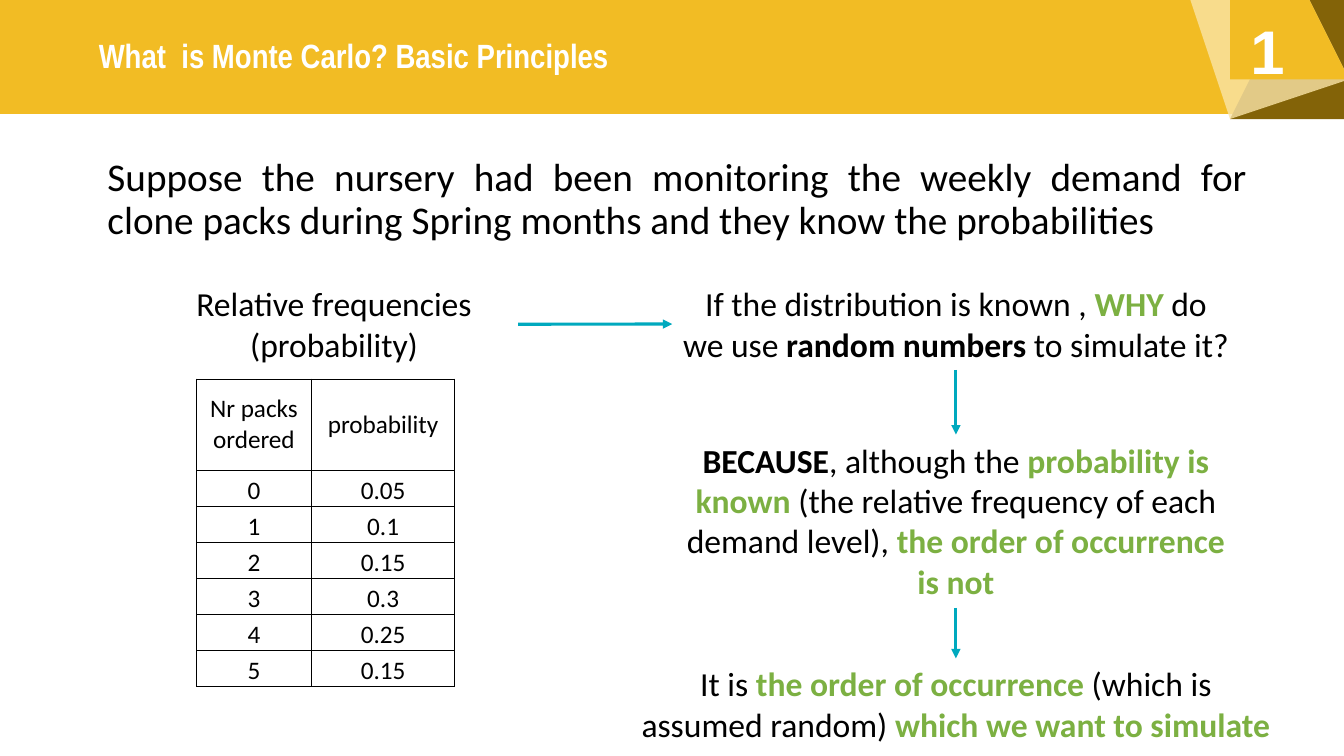
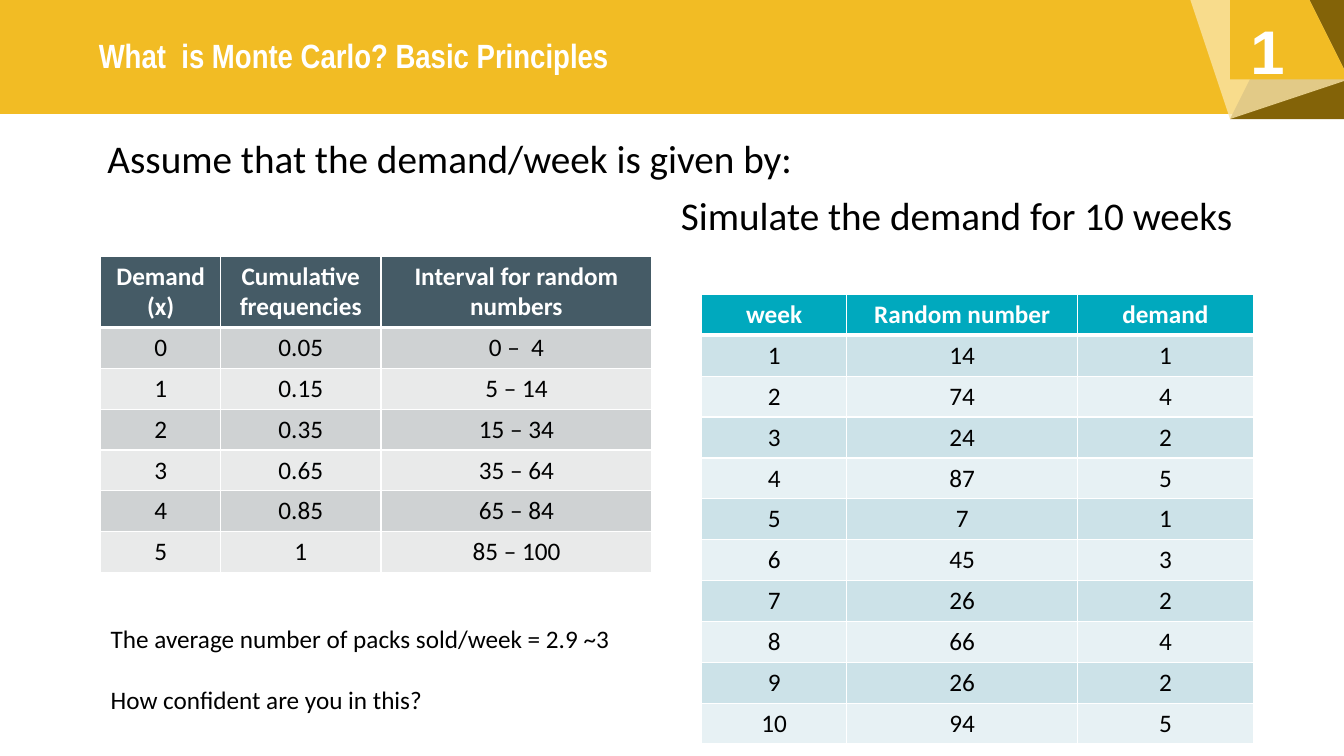
from lxml import etree
from pptx import Presentation
from pptx.dml.color import RGBColor
from pptx.enum import shapes, text
from pptx.oxml import ns
from pptx.util import Cm, Pt

GOLD = RGBColor(0xF2, 0xBC, 0x24)
BROWN = RGBColor(0x83, 0x63, 0x08)
CREAM = RGBColor(0xFA, 0xE4, 0xA7)
WHITE = RGBColor(0xFF, 0xFF, 0xFF)
BLACK = RGBColor(0, 0, 0)
GREEN = RGBColor(0x7C, 0xB0, 0x42)
TEAL = RGBColor(0x00, 0xA9, 0xBE)
SLATE = RGBColor(0x45, 0x5B, 0x66)
GREYS = RGBColor(0xCF, 0xD2, 0xD3), RGBColor(0xE9, 0xEA, 0xEA)
BLUES = RGBColor(0xCC, 0xE2, 0xE8), RGBColor(0xE7, 0xF1, 0xF4)

LEFT, MID = text.PP_ALIGN.LEFT, text.PP_ALIGN.CENTER
JUST = text.PP_ALIGN.JUSTIFY


def write(slide, box, paras, size=24, align=MID, face="Calibri", color=BLACK, bold=False):
    """Add a text box; a run is a plain string or a bold (words, colour) pair."""
    shape = slide.shapes.add_textbox(*map(Cm, box))
    frame = shape.text_frame
    frame.word_wrap = True
    for i, runs in enumerate(paras):
        para = frame.paragraphs[0] if i == 0 else frame.add_paragraph()
        para.alignment = align
        font = para.font
        font.size, font.name, font.bold = Pt(size), face, bold
        font.color.rgb = color
        for item in runs:
            run = para.add_run()
            if isinstance(item, str):
                run.text = item
            else:
                run.text, run.font.color.rgb = item
                run.font.bold = True
    return shape


def grid(slide, spot, cols, rows, high, head=None, bands=None):
    """Add a table: filled with white rules if banded, else plain with black ones."""
    wide = [Cm(c) for c in cols]
    table = slide.shapes.add_table(len(rows), len(cols), Cm(spot[0]), Cm(spot[1]),
                                   sum(wide), Cm(sum(high))).table
    table.first_row = table.horz_banding = False
    for col, width in zip(table.columns, wide):
        col.width = width
    rule, thin, thick = (WHITE, 1, 3) if bands else (BLACK, 0.5, 0.5)
    for r, row in enumerate(rows):
        table.rows[r].height = Cm(high[r])
        for c, words in enumerate(row):
            cell = table.cell(r, c)
            cell.text = words
            para = cell.text_frame.paragraphs[0]
            para.alignment = MID
            font = para.font
            font.size, font.name = Pt(18), "Calibri"
            font.bold = bool(bands) and r == 0
            font.color.rgb = WHITE if font.bold else BLACK
            props = cell._tc.get_or_add_tcPr()
            for side in "LRTB":
                heavy = (r, side) in ((0, "B"), (1, "T"))
                line = etree.SubElement(props, ns.qn("a:ln" + side),
                                        w=str(Pt(thick if heavy else thin)))
                fill = etree.SubElement(line, ns.qn("a:solidFill"))
                etree.SubElement(fill, ns.qn("a:srgbClr"), val=str(rule))
            if r == 0:
                cell.vertical_anchor = text.MSO_ANCHOR.MIDDLE
            if bands:
                cell.fill.solid()
                cell.fill.fore_color.rgb = bands[(r - 1) % 2] if r else head
            else:
                cell.fill.background()
                cell.margin_left = cell.margin_right = 0
                cell.margin_top = cell.margin_bottom = 0
                if r:
                    cell.vertical_anchor = text.MSO_ANCHOR.BOTTOM


deck = Presentation()
deck.slide_width, deck.slide_height = Cm(33.87), Cm(19.05)
why, demo = [deck.slides.add_slide(deck.slide_layouts[6]) for _ in range(2)]

# Header band, folded-paper corner and title on every slide
FOLDS = [
    (BROWN, [(33.87, -0.03), (33.87, 2.87), (30.99, 2.57), (31.55, 0.64), (31.88, 0.03)]),
    (CREAM, [(33.2, -0.3), (33.76, 2.13), (30.96, 2.57), (30.33, 0.15)]),
    (GOLD, [(33.2, -0.3), (33.76, 2.13), (31.19, 2.03), (31.27, 0.3)]),
]
for slide in deck.slides:
    band = slide.shapes.add_shape(shapes.MSO_SHAPE.RECTANGLE, 0, Cm(-0.03), Cm(33.87), Cm(2.9))
    parts = [(band, GOLD)]
    for color, points in FOLDS:
        pen = slide.shapes.build_freeform(*points[0], scale=Cm(1))
        pen.add_line_segments(points[1:], close=True)
        parts.append((pen.convert_to_shape(), color))
    for shape, color in parts:
        shape.shadow.inherit = False
        shape.fill.solid()
        shape.fill.fore_color.rgb = color
        shape.line.fill.background()
        if color == CREAM:
            tint = shape._element.spPr.find(".//" + ns.qn("a:srgbClr"))
            etree.SubElement(tint, ns.qn("a:alpha"), val="80000")
    frame = parts[-1][0].text_frame
    frame.margin_left, frame.margin_top = Cm(0.51), Cm(1.02)
    frame.margin_right, frame.margin_bottom = Cm(0.76), Cm(0.51)
    frame.vertical_anchor = text.MSO_ANCHOR.MIDDLE
    mark = frame.paragraphs[0]
    mark.text, mark.alignment = "1", LEFT
    mark.font.size, mark.font.name, mark.font.bold = Pt(44), "Arial", True
    mark.font.color.rgb = WHITE
    write(slide, (2.24, 0.76, 13.72, 1.27), [["What  is Monte Carlo? Basic Principles"]],
          align=LEFT, face="Arial Narrow", color=WHITE, bold=True)

# Lead text
lead = write(why, (2.46, 3.86, 29.21, 3), [[
    "Suppose the nursery had been monitoring the weekly demand for "
    "clone packs during Spring months and they know the probabilities"]], 28, JUST)
goal = write(demo, (2.46, 3.4, 29.21, 3), [
    ["Assume that the demand/week is given by:"],
    ["Simulate the demand for 10 weeks"]], 28, JUST)
for shape in (lead, goal):
    for para in shape.text_frame.paragraphs:
        para.line_spacing, para.space_before = 0.9, Pt(10)
goal.text_frame.paragraphs[1]._p.get_or_add_pPr().set("marL", str(Cm(14.45)))

# Slide 1: chain of reasoning
write(why, (3.58, 7.01, 9.68, 2.31), [["Relative frequencies"], ["(probability)"]])
ask = write(why, (16.94, 7.01, 14.3, 2.31), [[
    "If the distribution is known , ", ("WHY", GREEN), " do we use ",
    ("random numbers ", BLACK), "to simulate it?"]])
cause = write(why, (16.94, 10.95, 14.3, 4.37), [[
    ("BECAUSE", BLACK), ", although the ", ("probability is known", GREEN),
    " (the relative frequency of each demand level), ",
    ("the order of occurrence is not", GREEN)]])
close = write(why, (15.81, 16.59, 16.56, 2.31), [[
    "It is ", ("the order of occurrence ", GREEN), "(which is assumed random) ",
    ("which we want to simulate", GREEN)]])
for start, end, side in ((None, ask, 1), (ask, cause, 0), (cause, close, 0)):
    arrow = why.shapes.add_connector(shapes.MSO_CONNECTOR.STRAIGHT,
                                     Cm(13.06), Cm(8.17), Cm(16.94), Cm(8.17))
    if start:
        arrow.begin_connect(start, 2)
    arrow.end_connect(end, side)
    arrow.line.color.rgb, arrow.line.width = TEAL, Pt(2.25)
    etree.SubElement(arrow.line._get_or_add_ln(), ns.qn("a:tailEnd"), type="triangle")
    etree.SubElement(arrow._element.spPr, ns.qn("a:effectLst"))

odds = ["0.05", "0.1", "0.15", "0.3", "0.25", "0.15"]
grid(why, (4.95, 9.55), (2.9, 3.61),
     [("Nr packs ordered", "probability")] + [(str(n), p) for n, p in enumerate(odds)],
     [2.29] + [0.91] * 6)

# Slide 2: lookup table and simulated weeks
sums = ["0.05", "0.15", "0.35", "0.65", "0.85", "1"]
spans = ["0 –  4", "5 – 14", "15 – 34", "35 – 64", "65 – 84", "85 – 100"]
grid(demo, (2.54, 6.45), (3.02, 4.04, 6.83),
     [("Demand (x)", "Cumulative frequencies", "Interval for random numbers")]
     + [(str(n), *pair) for n, pair in enumerate(zip(sums, spans))],
     [1.8] + [1.03] * 6, SLATE, GREYS)

draws = [(14, 1), (74, 4), (24, 2), (87, 5), (7, 1), (45, 3), (26, 2), (66, 4), (26, 2), (94, 5)]
grid(demo, (17.68, 7.42), (3.66, 5.82, 4.42),
     [("week", "Random number", "demand")]
     + [(str(n), str(draw), str(need)) for n, (draw, need) in enumerate(draws, 1)],
     [1.03] * 11, TEAL, BLUES)

note = write(demo, (2.54, 15.57, 13.89, 2.57), [
    ["The average number of packs sold/week = 2.9 ~3"],
    ["How confident are you in this?"]], 18, LEFT)
note.text_frame.paragraphs[1].space_before = Pt(22)

deck.save("out.pptx")
